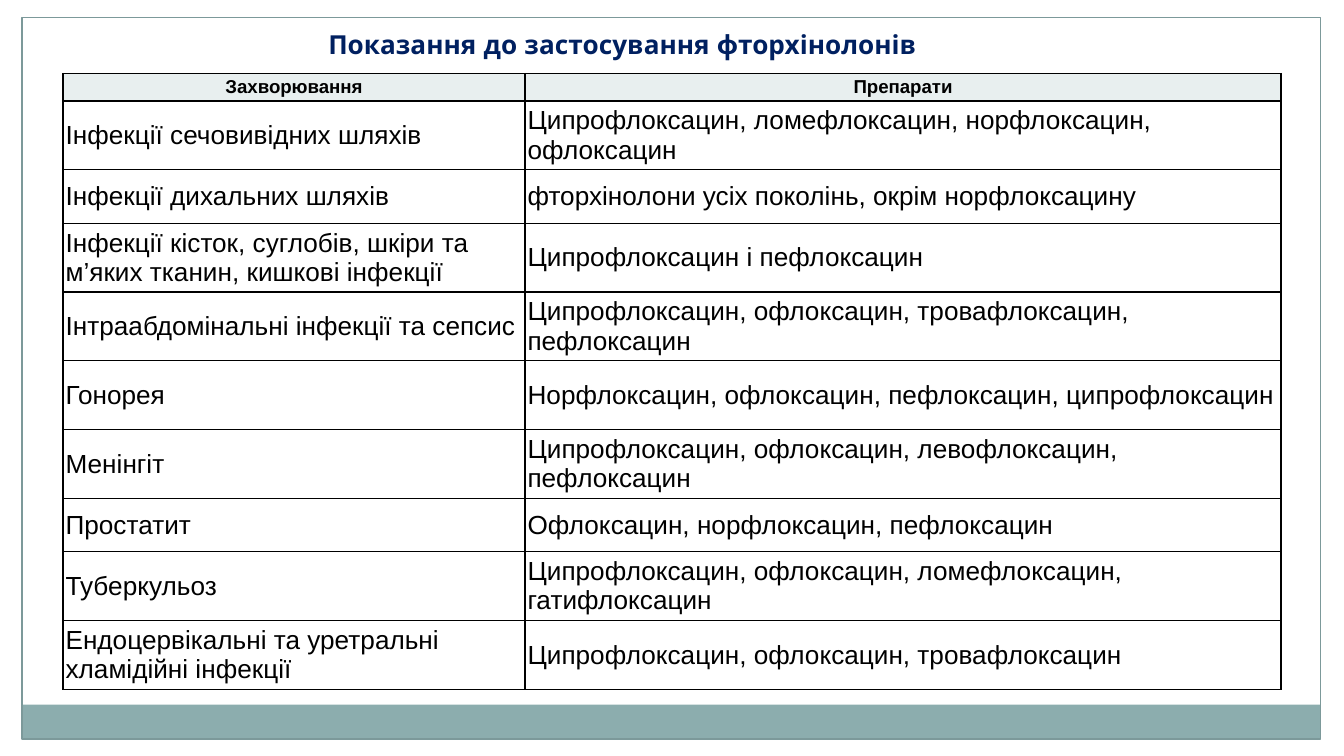
from lxml import etree
from pptx import Presentation
from pptx import util as u
from pptx.dml.color import RGBColor
from pptx.enum import shapes, text
from pptx.oxml import ns

Cm, Pt = u.Cm, u.Pt


def rgb(value):
    return RGBColor.from_string(value)


def write(frame, words, size=14, font="Arial", color="000000", bold=False,
          align=text.PP_ALIGN.LEFT):
    paragraph = frame.paragraphs[0]
    paragraph.alignment = align
    run = paragraph.add_run()
    run.text = words
    run.font.size, run.font.name, run.font.bold = Pt(size), font, bold
    run.font.color.rgb = rgb(color)


prs = Presentation()
prs.slide_width, prs.slide_height = Cm(25.4), Cm(14.29)
slide = prs.slides.add_slide(prs.slide_layouts[5])

# White page margins, footer band and page border: place, fill, line
panels = [
    ((0, 0, 25.4, 0.33), "FFFFFF", None),
    ((24.97, 0, 0.43, 14.29), "FFFFFF", None),
    ((0, 0, 0.43, 14.29), "FFFFFF", None),
    ((0.41, 13.32, 24.54, 0.65), "8CADAE", None),
    ((0.42, 0.33, 24.54, 13.64), None, "7C999A"),
]
for place, fill, line in panels:
    panel = slide.shapes.add_shape(shapes.MSO_SHAPE.RECTANGLE,
                                   *[Cm(length) for length in place])
    panel.shadow.inherit = False
    if fill:
        panel.fill.solid()
        panel.fill.fore_color.rgb = rgb(fill)
    else:
        panel.fill.background()
    if line:
        panel.line.color.rgb = rgb(line)
        panel.line.width = Pt(0.75)
    else:
        panel.line.fill.background()

# Heading
heading = slide.shapes.title
heading.left, heading.top, heading.width, heading.height = (
    Cm(5.95), Cm(0.4), Cm(11.71), Cm(0.86))
heading.text_frame.word_wrap = True
heading.text_frame.auto_size = text.MSO_AUTO_SIZE.NONE
heading.text_frame.vertical_anchor = text.MSO_ANCHOR.TOP
write(heading.text_frame, "Показання до застосування фторхінолонів",
      font="Quicksand", color="002060", bold=True)

# Indications and the drugs for each
indications = [
    ("Захворювання", "Препарати"),
    ("Інфекції сечовивідних шляхів",
     "Ципрофлоксацин, ломефлоксацин, норфлоксацин, офлоксацин"),
    ("Інфекції дихальних шляхів",
     "фторхінолони усіх поколінь, окрім норфлоксацину"),
    ("Інфекції кісток, суглобів, шкіри та м’яких тканин, кишкові інфекції",
     "Ципрофлоксацин і пефлоксацин"),
    ("Інтраабдомінальні інфекції та сепсис",
     "Ципрофлоксацин, офлоксацин, тровафлоксацин, пефлоксацин"),
    ("Гонорея", "Норфлоксацин, офлоксацин, пефлоксацин, ципрофлоксацин"),
    ("Менінгіт", "Ципрофлоксацин, офлоксацин, левофлоксацин, пефлоксацин"),
    ("Простатит", "Офлоксацин, норфлоксацин, пефлоксацин"),
    ("Туберкульоз", "Ципрофлоксацин, офлоксацин, ломефлоксацин, гатифлоксацин"),
    ("Ендоцервікальні та уретральні хламідійні інфекції",
     "Ципрофлоксацин, офлоксацин, тровафлоксацин"),
]
heights = [0.52, 1.3, 1.01, 1.3, 1.3, 1.3, 1.3, 1.01, 1.3, 1.3]
widths = [8.73, 14.29]

table = slide.shapes.add_table(len(heights), len(widths), Cm(1.19), Cm(1.39),
                               Cm(sum(widths)), Cm(sum(heights))).table
table.horz_banding = False
for column, width in zip(table.columns, widths):
    column.width = Cm(width)

for r, (row, entries) in enumerate(zip(table.rows, indications)):
    row.height = Cm(heights[r])
    for cell, entry in zip(row.cells, entries):
        cell.margin_left = cell.margin_right = Cm(0.05)
        cell.margin_top = cell.margin_bottom = Cm(0.05)
        cell.vertical_anchor = text.MSO_ANCHOR.MIDDLE
        properties = cell._tc.get_or_add_tcPr()
        for side in ("a:lnL", "a:lnR", "a:lnT", "a:lnB"):
            edge = etree.SubElement(properties, ns.qn(side), w=str(Pt(0.75)))
            ink = etree.SubElement(edge, ns.qn("a:solidFill"))
            etree.SubElement(ink, ns.qn("a:srgbClr"), val="000000")
        if r == 0:
            cell.fill.solid()
            cell.fill.fore_color.rgb = rgb("E8EFEF")
            write(cell.text_frame, entry, size=10, bold=True,
                  align=text.PP_ALIGN.CENTER)
        else:
            cell.fill.background()
            write(cell.text_frame, entry)

prs.save("out.pptx")
